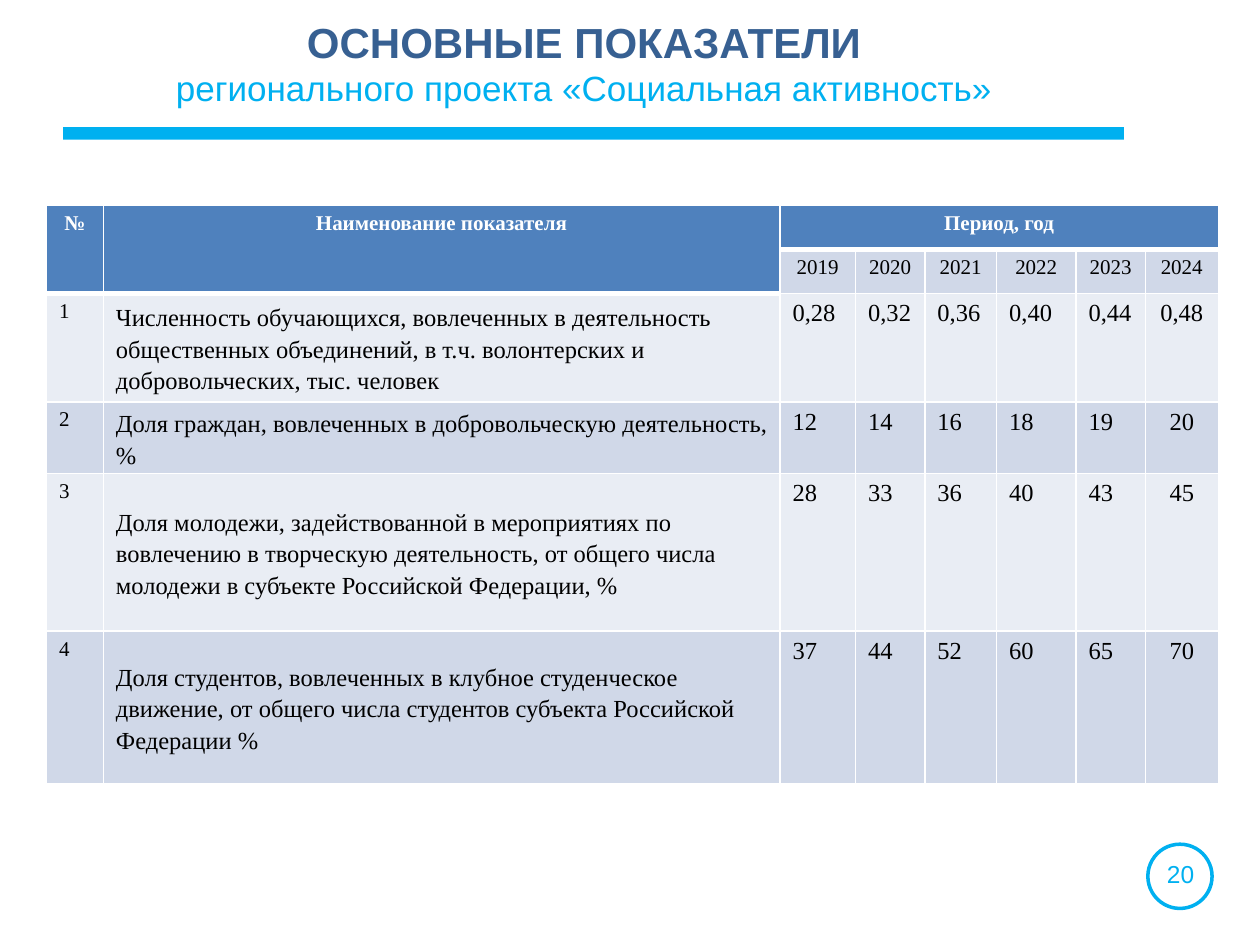
from dataclasses import dataclass

from lxml import etree
from pptx import Presentation
from pptx.dml.color import RGBColor
from pptx.enum.shapes import MSO_SHAPE
from pptx.enum.text import MSO_ANCHOR, PP_ALIGN
from pptx.oxml.ns import qn
from pptx.util import Inches, Pt

CENTER, LEFT = PP_ALIGN.CENTER, PP_ALIGN.LEFT
TOP, MIDDLE = MSO_ANCHOR.TOP, MSO_ANCHOR.MIDDLE
RECT, OVAL = MSO_SHAPE.RECTANGLE, MSO_SHAPE.OVAL


@dataclass(frozen=True)
class Theme:
    accent: str = "00B0F0"
    title: str = "376092"
    header: str = "4F81BD"
    band_dark: str = "D0D8E8"
    band_light: str = "E9EDF4"
    white: str = "FFFFFF"
    black: str = "000000"
    sans: str = "Arial"
    serif: str = "Times New Roman"
    title_size: int = 24
    subtitle_size: int = 20
    body_size: int = 14
    label_size: int = 12
    line_spacing: int = 18


THEME = Theme()

COLUMN_WIDTHS = [0.45, 5.37, 0.6, 0.55, 0.57, 0.63, 0.55, 0.58]
ROW_HEIGHTS = [0.35, 0.35, 0.86, 0.57, 1.25, 1.21]
NAME_COL, FIRST_YEAR_COL, LAST_COL = 1, 2, len(COLUMN_WIDTHS) - 1
YEARS = range(2019, 2025)
INDICATORS = [
    ("Численность обучающихся, вовлеченных в деятельность общественных "
     "объединений, в т.ч. волонтерских и добровольческих, тыс. человек",
     ["0,28", "0,32", "0,36", "0,40", "0,44", "0,48"]),
    ("Доля граждан, вовлеченных в добровольческую деятельность, %",
     [12, 14, 16, 18, 19, 20]),
    ("Доля молодежи, задействованной в мероприятиях по вовлечению в творческую "
     "деятельность, от общего числа молодежи в субъекте Российской Федерации, %",
     [28, 33, 36, 40, 43, 45]),
    ("Доля студентов, вовлеченных в клубное студенческое движение, "
     "от общего числа студентов субъекта Российской Федерации %",
     [37, 44, 52, 60, 65, 70]),
]


def rgb(value):
    return RGBColor.from_string(value)


def write(p, text, size, color, font, bold=False, align=CENTER):
    p.text = str(text)
    p.alignment = align
    p.font.size = Pt(size)
    p.font.name = font
    p.font.bold = bold
    p.font.color.rgb = rgb(color)


def add_text_box(slide, x, y, w, h):
    tf = slide.shapes.add_textbox(Inches(x), Inches(y), Inches(w), Inches(h)).text_frame
    tf.word_wrap = True
    return tf


def add_plain_shape(slide, kind, x, y, w, h):
    sp = slide.shapes.add_shape(kind, Inches(x), Inches(y), Inches(w), Inches(h))
    sp.shadow.inherit = False
    return sp


def add_title(slide, x, y, w, h):
    tf = add_text_box(slide, x, y, w, h)
    write(tf.paragraphs[0], "ОСНОВНЫЕ ПОКАЗАТЕЛИ",
          THEME.title_size, THEME.title, THEME.sans, bold=True)
    write(tf.add_paragraph(), "регионального проекта «Социальная активность»",
          THEME.subtitle_size, THEME.accent, THEME.sans)


def add_rule(slide, x, y, w, h):
    bar = add_plain_shape(slide, RECT, x, y, w, h)
    bar.fill.solid()
    bar.fill.fore_color.rgb = rgb(THEME.accent)
    bar.line.fill.background()


def add_page_number(slide, x, y, size, number):
    ring = add_plain_shape(slide, OVAL, x, y, size, size)
    ring.fill.background()
    ring.line.color.rgb = rgb(THEME.accent)
    ring.line.width = Pt(2)
    tf = add_text_box(slide, x - 0.03, y + 0.07, size + 0.07, 0.34)
    write(tf.paragraphs[0], number, THEME.body_size, THEME.accent, THEME.sans)


def set_borders(cell, top, bottom):
    """Draw white borders; call before setting the fill, which must follow them."""
    tc_pr = cell._tc.get_or_add_tcPr()
    for side, width in (("L", 1), ("R", 1), ("T", top), ("B", bottom)):
        ln = etree.SubElement(tc_pr, qn(f"a:ln{side}"), w=str(Pt(width)))
        fill = etree.SubElement(ln, qn("a:solidFill"))
        etree.SubElement(fill, qn("a:srgbClr"), val=THEME.white)


def is_header(row, col):
    return row == 0 or (row == 1 and col < FIRST_YEAR_COL)


def style_cell(cell, row, col):
    below_header = row > 0 and is_header(row - 1, col)
    set_borders(cell, 3 if below_header else 1, 3 if is_header(row, col) else 1)
    band = THEME.band_dark if row % 2 else THEME.band_light
    cell.fill.solid()
    cell.fill.fore_color.rgb = rgb(THEME.header if is_header(row, col) else band)
    cell.vertical_anchor = TOP


def fill_cell(cell, row, col, text):
    header = is_header(row, col)
    small = row < 2 or col == 0
    p = cell.text_frame.paragraphs[0]
    write(p, text,
          THEME.label_size if small else THEME.body_size,
          THEME.white if header else THEME.black, THEME.serif, bold=header,
          align=CENTER if row < 2 or col == LAST_COL else LEFT)
    if row >= 2 and col == NAME_COL:
        cell.vertical_anchor = MIDDLE
        cell.margin_left = cell.margin_right = Inches(0.02)
        cell.margin_top = cell.margin_bottom = 0
        p.line_spacing = Pt(THEME.line_spacing)
        p._p.get_or_add_pPr().set("marL", str(Inches(0.08)))


def add_indicator_table(slide, x, y):
    rows = [["№", "Наименование показателя", "Период, год"], [None, None, *YEARS]]
    rows += [[n, name, *values] for n, (name, values) in enumerate(INDICATORS, 1)]
    table = slide.shapes.add_table(
        len(ROW_HEIGHTS), len(COLUMN_WIDTHS), Inches(x), Inches(y),
        Inches(sum(COLUMN_WIDTHS)), Inches(sum(ROW_HEIGHTS))).table
    for column, width in zip(table.columns, COLUMN_WIDTHS):
        column.width = Inches(width)
    for r, height in enumerate(ROW_HEIGHTS):
        table.rows[r].height = Inches(height)
        for c in range(len(COLUMN_WIDTHS)):
            style_cell(table.cell(r, c), r, c)
    for col in range(FIRST_YEAR_COL):
        table.cell(0, col).merge(table.cell(1, col))
    table.cell(0, FIRST_YEAR_COL).merge(table.cell(0, LAST_COL))
    for r, texts in enumerate(rows):
        for c, text in enumerate(texts):
            if text is not None:
                fill_cell(table.cell(r, c), r, c, text)


def main():
    prs = Presentation()
    prs.slide_width, prs.slide_height = Inches(10), Inches(7.5)
    slide = prs.slides.add_slide(prs.slide_layouts[6])
    add_rule(slide, 0.5, 1.01, 8.42, 0.1)
    add_page_number(slide, 9.11, 6.7, 0.51, 20)
    add_title(slide, 0.74, 0.08, 7.79, 0.64)
    add_indicator_table(slide, 0.37, 1.63)
    prs.save("out.pptx")


if __name__ == "__main__":
    main()
